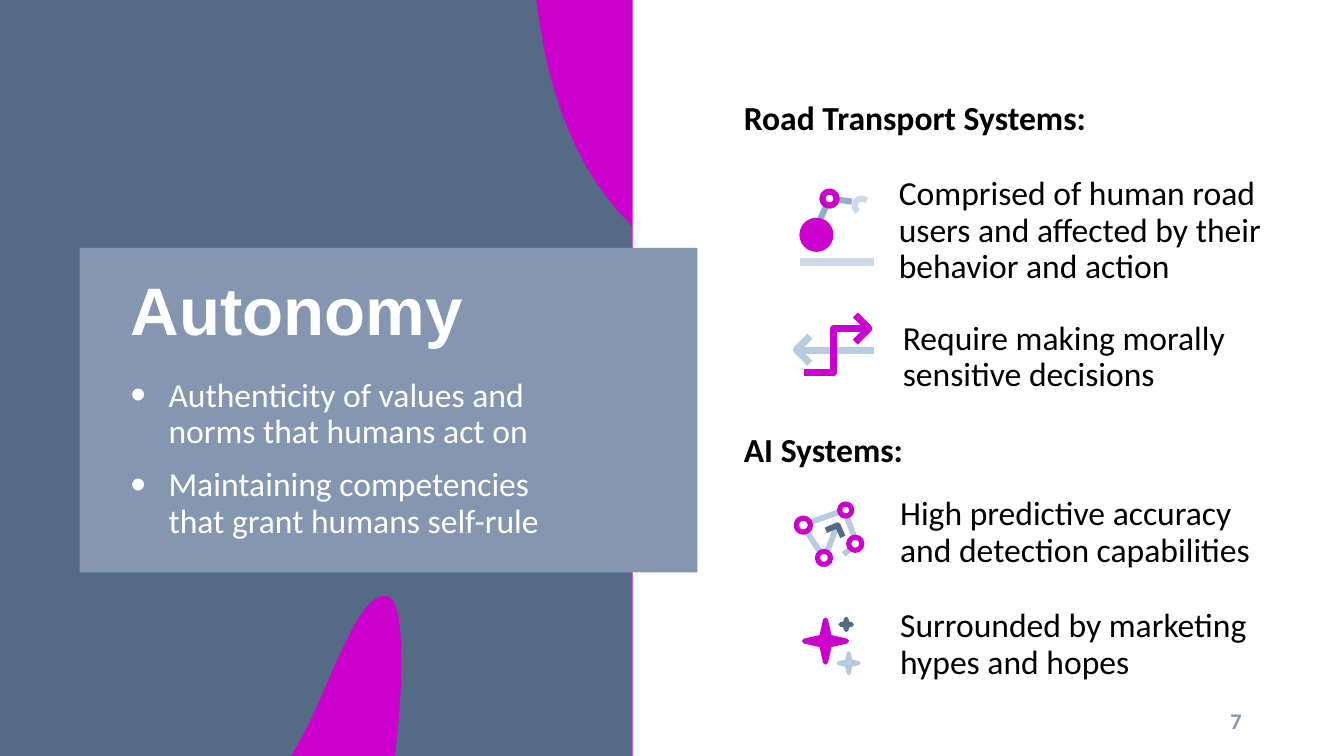
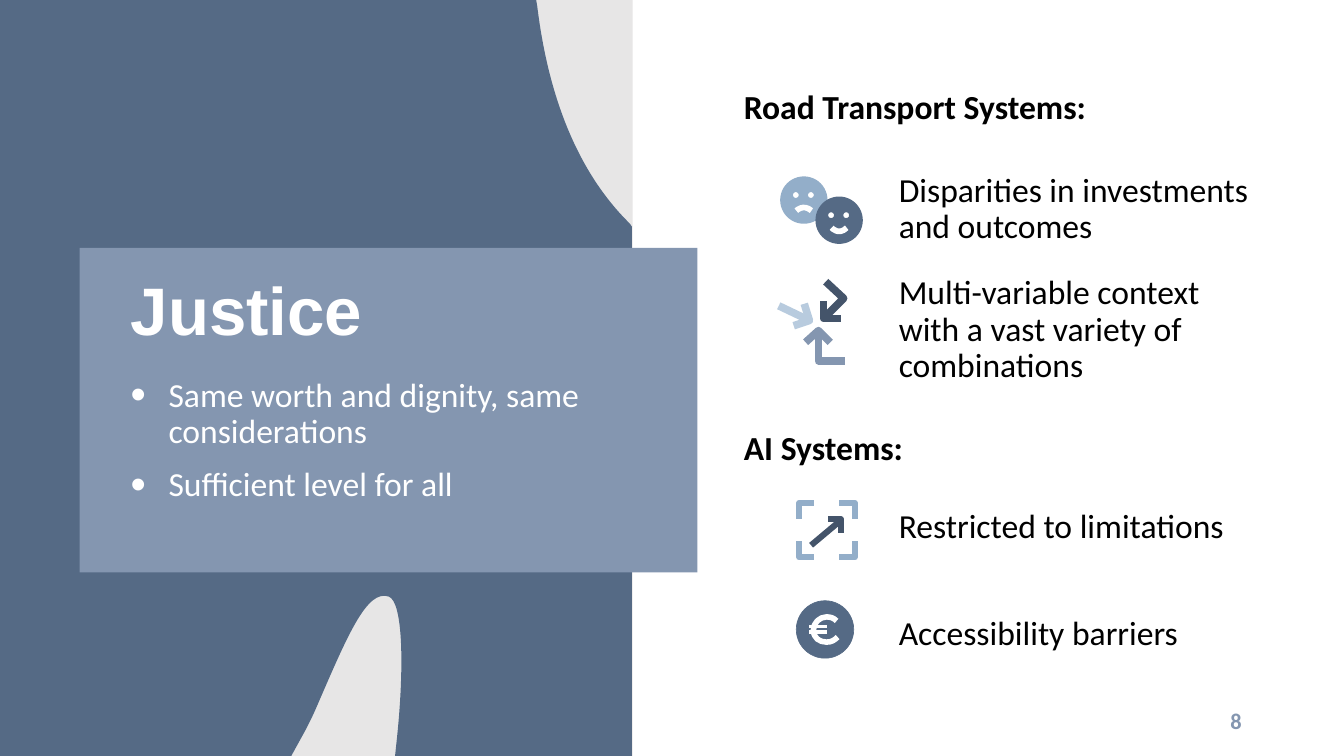
from lxml import etree
from pptx import Presentation
from pptx import util as u
from pptx.dml.color import RGBColor
from pptx.enum import shapes, text
from pptx.oxml.ns import qn

# Grid: 80 columns by 45 rows; icons use finer steps
COLUMNS, ROWS = 80, 45
CELL = u.Inches(7.5) // ROWS
STEP = u.Inches(0.01)
HANG = u.Inches(0.375)

# Colours
WHITE = RGBColor(0xFF, 0xFF, 0xFF)
BLACK = RGBColor(0x00, 0x00, 0x00)
MAGENTA = RGBColor(0xCC, 0x00, 0xCC)
GREY = RGBColor(0xE7, 0xE6, 0xE6)
SLATE = RGBColor(0x55, 0x6A, 0x85)
NAVY = RGBColor(0x44, 0x54, 0x6A)
STEEL = RGBColor(0x84, 0x96, 0xB0)
SKY = RGBColor(0x93, 0xAE, 0xC9)
MIST = RGBColor(0xB8, 0xCB, 0xDE)
PALE = RGBColor(0xCC, 0xDA, 0xE8)

BODY_FONT, TITLE_FONT = "Calibri", "Arial"
RECTANGLE = shapes.MSO_SHAPE.RECTANGLE
OVAL = shapes.MSO_SHAPE.OVAL
STAR = shapes.MSO_SHAPE.STAR_4_POINT
TOP, MIDDLE, BOTTOM = (text.MSO_ANCHOR.TOP, text.MSO_ANCHOR.MIDDLE,
                       text.MSO_ANCHOR.BOTTOM)

# Slate panel in columns and rows; six numbers make a curve
PANEL = [(0, 0), (31.92, 0), (31.98, 0.36),
         (32.7, 6.3, 34.68, 10.56, 37.5, 13.32), (37.62, 13.5),
         (37.62, 45), (23.52, 45), (23.64, 43.86),
         (24.06, 39.78, 24, 35.88, 23.16, 35.52),
         (21.84, 35.04, 20.7, 37.8, 18.78, 42.24),
         (18.54, 42.78, 18.3, 43.26, 18, 43.8), (17.34, 45), (0, 45)]


def cells(*counts):
    return [round(count * CELL) for count in counts]


def paint(shape, fill=None, line=None, width=1):
    shape.shadow.inherit = False
    if fill is None:
        shape.fill.background()
    else:
        shape.fill.solid()
        shape.fill.fore_color.rgb = fill
    if line is None:
        shape.line.fill.background()
    else:
        shape.line.color.rgb = line
        shape.line.width = u.Pt(width)
    return shape


def outline(holder, path, closed):
    """Build a freeform; a part of six numbers becomes a cubic curve."""
    points = [part[i:i + 2] for part in path for i in range(0, len(part), 2)]
    builder = holder.build_freeform(*points[0], scale=1.0)
    builder.add_line_segments(points[1:], close=closed)
    shape = builder.convert_to_shape()
    segments = iter(list(shape._element.iter(qn("a:lnTo"))))
    for part in path[1:]:
        segment = next(segments)
        if len(part) == 6:
            segment.addprevious(curve := etree.Element(qn("a:cubicBezTo")))
            for corner in (segment, next(segments), next(segments)):
                curve.append(corner[0])
                corner.getparent().remove(corner)
    return shape


class Icon:
    """A group of strokes, discs and stars on the fine grid."""

    def __init__(self, page, column, row):
        self.shapes = page.shapes.add_group_shape().shapes
        self.left, self.top = cells(column, row)

    def spot(self, *numbers):
        starts = (self.left, self.top) * 3
        return tuple(round(start + n * STEP) for start, n in zip(starts, numbers))

    def stroke(self, color, width, *path, square=False):
        path = [self.spot(*part) for part in path]
        if len(path) == 2 and len(path[1]) == 2:
            shape = self.shapes.add_connector(shapes.MSO_CONNECTOR.STRAIGHT,
                                              *path[0], *path[1])
            shape.line.color.rgb = color
            shape.line.width = u.Pt(width)
            etree.SubElement(shape._element.spPr, qn("a:effectLst"))
        else:
            shape = paint(outline(self.shapes, path, False), None, color, width)
        if square:
            shape._element.spPr.find(qn("a:ln")).set("cap", "sq")

    def disc(self, x, y, size, fill, line=None, width=1, kind=OVAL):
        shape = self.shapes.add_shape(kind, *self.spot(x, y),
                                      round(size * STEP), round(size * STEP))
        return paint(shape, fill, line, width)

    def star(self, x, y, radius, fill, line, width):
        shape = self.disc(x - radius, y - radius, 2 * radius, fill, line, width, STAR)
        shape.adjustments[0] = 0.13


# Text
def prepare(box, area, anchor=TOP, inset=0):
    box.left, box.top, box.width, box.height = cells(*area)
    frame = box.text_frame
    frame.word_wrap = True
    frame.auto_size = text.MSO_AUTO_SIZE.NONE
    frame.vertical_anchor = anchor
    frame.margin_left = frame.margin_right = u.Inches(inset)
    frame.margin_top = frame.margin_bottom = u.Inches(inset / 2)
    return frame


def write(para, words, size=24, color=BLACK, bold=False, font=BODY_FONT,
          spacing=0.9, align=text.PP_ALIGN.LEFT):
    para.alignment = align
    para.line_spacing = spacing
    para.space_before = u.Pt(0)
    span = para.add_run()
    span.text = words
    span.font.name, span.font.size = font, u.Pt(size)
    span.font.bold, span.font.color.rgb = bold, color


def add_bullet(para):
    props = para._p.get_or_add_pPr()
    props.set("marL", str(HANG))
    props.set("indent", str(-HANG))
    color = etree.SubElement(props, qn("a:buClr"))
    etree.SubElement(color, qn("a:srgbClr"), val=str(WHITE))
    etree.SubElement(props, qn("a:buSzPct"), val="130000")
    etree.SubElement(props, qn("a:buFont"), typeface="Arial")
    etree.SubElement(props, qn("a:buChar"), char="•")


def add_text(page, words, area, anchor=TOP, inset=0, **style):
    box = page.shapes.add_textbox(0, 0, CELL, CELL)
    write(prepare(box, area, anchor, inset).paragraphs[0], words, **style)


def add_label(page, words, row, lines=2, column=53.5, width=21.66):
    add_text(page, words, (column, row, width, 2.18 * lines))


def add_heading(page, words, row):
    add_text(page, words, (44.28, row, 23.28, 2.18), bold=True)


# Shared side panel, title, list and page number
def add_page(deck, number, title, points, accent):
    page = deck.slides.add_slide(deck.slide_layouts[1])
    heading, body = page.shapes.title, page.placeholders[1]
    band = page.shapes.add_shape(RECTANGLE, *cells(0, 0, 37.66, ROWS))
    panel = outline(page.shapes, [cells(*part) for part in PANEL], True)
    card = page.shapes.add_shape(RECTANGLE, *cells(4.74, 14.76, 36.78, 19.32))
    for shape, fill in ((band, accent), (panel, SLATE), (card, STEEL)):
        paint(shape, fill)
        heading._element.addprevious(shape._element)

    frame = prepare(heading, (7.78, 16.38, 34.68, 4.38), BOTTOM)
    write(frame.paragraphs[0], title, 48, WHITE, True, TITLE_FONT, u.Pt(52))
    frame = prepare(body, (7.78, 22.53, 26.94, 9.72))
    for i, words in enumerate(points):
        para = frame.add_paragraph() if i else frame.paragraphs[0]
        add_bullet(para)
        write(para, words, color=WHITE)
        para.space_before = u.Pt(6 if i else 0)
        para.space_after = u.Pt(6)
    add_text(page, str(number), (56.5, 41.7, 18, 2.4), MIDDLE, 0.1, size=16,
             color=STEEL, bold=True, spacing=1.0, align=text.PP_ALIGN.RIGHT)
    return page


# Icons of the autonomy page
def draw_robot_arm(page):
    icon = Icon(page, 47.64, 11.4)
    icon.stroke(SKY, 4.4, (29, 7), (51, 10))
    icon.stroke(SKY, 4.4, (29, 7), (16, 36), (16, 56))
    icon.disc(22, 0, 14, WHITE, MAGENTA, 4.4)
    icon.stroke(PALE, 4.4, (57, 20), (54, 18, 53, 13, 55, 10), (58, 7, 62, 6, 66, 9))
    icon.disc(1, 28, 30, MAGENTA, MAGENTA, 2.75)
    icon.stroke(PALE, 5.5, (0, 70), (73, 70))


def draw_detour(page):
    icon = Icon(page, 47.4, 18.9)
    for color, *path in (
            (MIST, (3, 33), (74, 33)),
            (MIST, (11, 21), (0, 32), (11, 43)),
            (MAGENTA, (11, 55), (37, 55), (37, 11), (66, 11)),
            (MAGENTA, (61, 0), (72, 11), (61, 22))):
        icon.stroke(color, 5.05, *path, square=True)


def draw_network(page):
    icon = Icon(page, 47.4, 30)
    icon.stroke(MIST, 4.1, (40, 23), (28, 54), (6, 21), (48, 6), (60, 40), (47, 50))
    for x, y, size in ((0, 14, 14), (52, 33, 13), (43, 0, 12), (21, 47, 13)):
        icon.disc(x, y, size, WHITE, MAGENTA, 3.69)
    icon.stroke(SLATE, 4.1, (32, 25), (41, 21), (45, 30), square=True)


def draw_sparkles(page):
    icon = Icon(page, 47.88, 36.84)
    icon.star(44, 44, 10, PALE, MIST, 2.84)
    icon.star(41.5, 5.5, 5.5, SKY, SLATE, 3.2)
    icon.star(21, 22, 21, MAGENTA, MAGENTA, 3.55)


# Icons of the justice page
def draw_faces(page):
    icon = Icon(page, 46.44, 10.5)
    faces = ((0, 0, SKY, 34, -7), (35, 20, SLATE, 31, 8))
    for x, y, color, *_ in faces:
        icon.disc(x, y, 47, color)
    for x, y, _, mouth, bend in faces:
        for eye in (13, 28):
            icon.disc(x + eye, y + 16, 5, WHITE, WHITE, 0.38)
        left, right, level = x + 16, x + 31, y + mouth
        icon.stroke(WHITE, 4.08, (left, level),
                    (left, level, x + 23, level + bend, right, level))


def draw_merging_arrows(page):
    icon = Icon(page, 46.56, 16.92)
    for color, *path in (
            (MIST, (0, 23), (23, 34)),
            (MIST, (23, 23), (27, 36), (15, 40)),
            (NAVY, (46, 0), (61, 14), (44, 31)),
            (NAVY, (55, 34), (41, 34), (41, 20)),
            (STEEL, (59, 76), (36, 76), (36, 51)),
            (STEEL, (26, 55), (36, 46), (45, 55))):
        icon.stroke(color, 5.4, *path, square=True)


def draw_frame(page):
    icon = Icon(page, 47.58, 29.94)
    icon.stroke(NAVY, 4.35, (14, 40), (39, 19), square=True)
    icon.stroke(NAVY, 4.35, (31, 16), (41, 16), (41, 27), square=True)
    for x, inner_x in ((0, 12), (55, 42)):
        for y, inner_y in ((0, 13), (54, 41)):
            icon.stroke(SKY, 4.35, (x, inner_y), (x, y), (inner_x, y), square=True)


def draw_euro(page):
    icon = Icon(page, 47.4, 35.76)
    icon.disc(0, 0, 57, SLATE, SLATE, 0.44)
    for y in (26, 31):
        icon.stroke(WHITE, 2.2, (13, y), (30, y))
    icon.stroke(WHITE, 3.96, (40, 20), (37, 17, 34, 16, 30, 16),
                (23, 16, 17, 22, 17, 29), (17, 37, 23, 41, 30, 41),
                (35, 41, 38, 39, 41, 36))


def main():
    deck = Presentation()
    deck.slide_width, deck.slide_height = cells(COLUMNS, ROWS)

    # Autonomy
    page = add_page(deck, 7, "Autonomy", [
        "Authenticity of values and norms that humans act on",
        "Maintaining competencies that grant humans self-rule"], MAGENTA)
    add_heading(page, "Road Transport Systems:", 6.06)
    draw_robot_arm(page)
    add_label(page, "Comprised of human road users and affected by their "
                    "behavior and action", 10.53, lines=3)
    draw_detour(page)
    add_label(page, "Require making morally sensitive decisions", 19.14, column=53.74)
    add_heading(page, "AI Systems:", 25.8)
    draw_network(page)
    add_label(page, "High predictive accuracy and detection capabilities",
              29.58, column=53.58)
    draw_sparkles(page)
    add_label(page, "Surrounded by marketing hypes and hopes", 36.24, column=53.58)

    # Justice
    page = add_page(deck, 8, "Justice", [
        "Same worth and dignity, same considerations",
        "Sufficient level for all"], GREY)
    add_heading(page, "Road Transport Systems:", 5.4)
    draw_faces(page)
    add_label(page, "Disparities in investments and outcomes", 10.32)
    draw_merging_arrows(page)
    add_label(page, "Multi-variable context with a vast variety of combinations",
              16.41, lines=3, width=19.32)
    add_heading(page, "AI Systems:", 25.68)
    draw_frame(page)
    add_label(page, "Restricted to limitations", 30.33, lines=1)
    draw_euro(page)
    add_label(page, "Accessibility barriers", 36.72, lines=1)

    deck.save("out.pptx")


if __name__ == "__main__":
    main()
